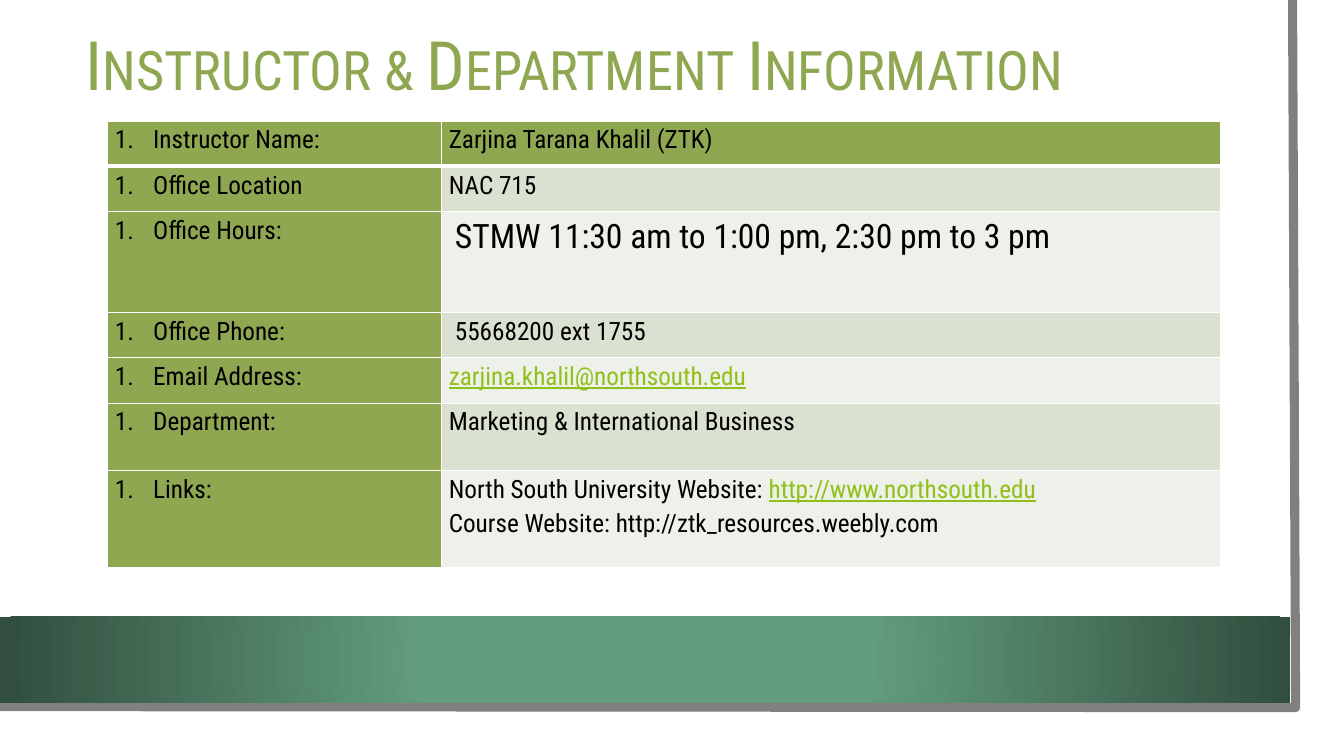
from dataclasses import dataclass

from lxml.etree import SubElement as Sub
from pptx import Presentation
from pptx.dml.color import RGBColor as Rgb
from pptx.enum.shapes import MSO_SHAPE as Shape
from pptx.enum.text import MSO_ANCHOR as Anchor
from pptx.oxml import parse_xml as to_xml
from pptx.oxml.ns import nsdecls, qn
from pptx.util import Inches, Pt


@dataclass(frozen=True)
class Theme:
    font: str = "Roboto Condensed"
    head: float = 48.6
    body: float = 18
    large: float = 24
    white: str = "FFFFFF"
    black: str = "000000"
    green: str = "8FA751"
    link: str = "91BF1A"
    edge: str = "808080"
    glow: str = "629D7D"
    dark: str = "314E3E"
    bands: tuple = ("EEF1E9", "DBE1D0")


T = Theme()
COLS, ROWS = 133.3, 75
LINK = dict(color=T.link, line=True)
FACTS = [
    ("Instructor Name:", 4.5, [[("Zarjina Tarana Khalil (ZTK)", {})]], 0),
    ("Office Location", 4.5, [[("NAC 715", {})]], 0),
    ("Office Hours:", 10, [[("STMW 11:30 am to 1:00 pm, 2:30 pm to 3 pm",
                             dict(size=T.large))]], 0.6),
    ("Office Phone:", 4.5, [[("55668200 ext 1755", {})]], 0.6),
    ("Email Address:", 4.5, [[("zarjina.khalil@northsouth.edu", LINK)]], 0),
    ("Department:", 6.7, [[("Marketing & International Business", {})]], 0),
    ("Links:", 9.6, [
        [("North South University Website: ", {}),
         ("http://www.northsouth.edu", LINK)],
        [("Course Website: http://ztk_resources.weebly.com", {})]], 0),
]


def unit(n):
    return Inches(n / 10)


def write(para, text, size=T.body, color=T.black, line=False, caps=False):
    run = para.add_run()
    run.text = text
    font = run.font
    font.name, font.size = T.font, Pt(size)
    font.color.rgb = Rgb.from_string(color)
    if line:
        font.underline = True
    if caps:
        font._element.set("cap", "small")


def block(slide, box, color):
    shape = slide.shapes.add_shape(Shape.RECTANGLE, *map(unit, box))
    shape.shadow.inherit = False
    shape.line.fill.background()
    shape.fill.solid()
    shape.fill.fore_color.rgb = Rgb.from_string(color)
    return shape


def frame(slide, box):
    x, y, w, h = box
    block(slide, (x, y, w + 2.5, h + 2.5), T.white)
    pen = slide.shapes.build_freeform(unit(x + w - 0.3), unit(y), scale=1.0)
    pen.add_line_segments([(unit(x + w), unit(y + h)),
                           (unit(x), unit(y + h - 0.1))], close=False)
    edge = pen.convert_to_shape()
    edge.shadow.inherit = False
    edge.fill.background()
    edge.line.color.rgb = Rgb.from_string(T.edge)
    edge.line.width = Pt(6.5)


def band(slide, box):
    props = block(slide, box, T.glow)._element.spPr
    flat = props.find(qn("a:solidFill"))
    props.replace(flat, to_xml(
        f'<a:gradFill {nsdecls("a")} rotWithShape="1"><a:gsLst>'
        f'<a:gs pos="34000"><a:srgbClr val="{T.glow}"/></a:gs>'
        f'<a:gs pos="100000"><a:srgbClr val="{T.dark}"/></a:gs></a:gsLst>'
        '<a:path path="circle"><a:fillToRect l="50000" t="50000" '
        'r="50000" b="50000"/></a:path></a:gradFill>'))


def title(slide, box, text):
    body = slide.shapes.add_textbox(*map(unit, box)).text_frame
    body.word_wrap = True
    body.vertical_anchor = Anchor.MIDDLE
    write(body.paragraphs[0], text, size=T.head, color=T.green, caps=True)


def rule(cell, top, low):
    props = cell._tc.get_or_add_tcPr()
    for i, (side, wide) in enumerate(zip("LRTB", (1, 1, top, low))):
        props.insert(i, to_xml(
            f'<a:ln{side} {nsdecls("a")} w="{Pt(wide)}"><a:solidFill>'
            f'<a:srgbClr val="{T.white}"/></a:solidFill></a:ln{side}>'))


def fill(cell, color, paras, inset=0, count=False):
    cell.margin_left = cell.margin_right = unit(0.7)
    cell.margin_top = cell.margin_bottom = 0
    cell.fill.solid()
    cell.fill.fore_color.rgb = Rgb.from_string(color)
    body = cell.text_frame
    for i, runs in enumerate(paras):
        para = body.add_paragraph() if i else body.paragraphs[0]
        para.line_spacing = 1.15
        props = para._p.get_or_add_pPr()
        if inset:
            props.set("marL", str(unit(inset)))
        if count:
            props.set("indent", str(-unit(inset)))
            Sub(props, qn("a:buAutoNum"), type="arabicPeriod")
        for text, style in runs:
            write(para, text, **style)


def facts(slide, box):
    x, y, w, h = map(unit, box)
    grid = slide.shapes.add_table(len(FACTS), 2, x, y, w, h).table
    grid.horz_banding = False
    grid.columns[0].width = int(w * 0.3)
    grid.columns[1].width = w - int(w * 0.3)
    for i, (label, tall, paras, inset) in enumerate(FACTS):
        grid.rows[i].height = unit(tall)
        left, right = grid.cell(i, 0), grid.cell(i, 1)
        fill(left, T.green, [[(label, {})]], inset=3.8, count=True)
        fill(right, T.bands[i % 2] if i else T.green, paras, inset=inset)
        for cell in (left, right):
            rule(cell, 3 if i == 1 else 1, 1 if i else 3)


def main():
    deck = Presentation()
    deck.slide_width, deck.slide_height = unit(COLS), unit(ROWS)
    slide = deck.slides.add_slide(deck.slide_layouts[6])
    frame(slide, (0, 0, 128.5, 70.2))
    band(slide, (0, 61.2, 128, 8.5))
    title(slide, (7.5, 1.3, 113.7, 10), "Instructor & Department Information")
    facts(slide, (10.7, 12, 110.4, sum(row[1] for row in FACTS)))
    deck.save("out.pptx")


if __name__ == "__main__":
    main()
